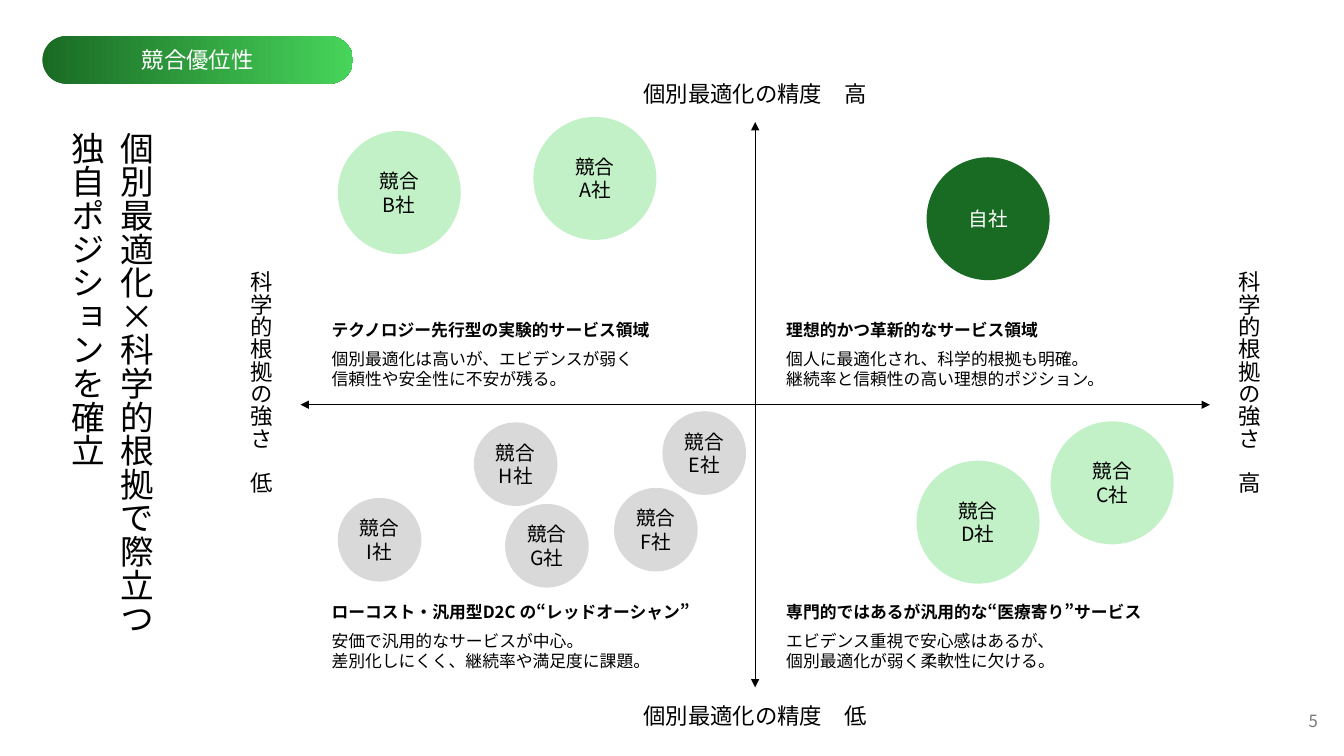
"""Build the competitive advantage slide: a positioning map with two axes."""
from copy import deepcopy
from dataclasses import dataclass

from pptx import Presentation
from pptx.dml.color import RGBColor as RGB
from pptx.enum.lang import MSO_LANGUAGE_ID as LANG
from pptx.enum.shapes import MSO_CONNECTOR as LINK, MSO_SHAPE as SHAPE
from pptx.enum.text import MSO_ANCHOR as ANCHOR, MSO_AUTO_SIZE as FIT, PP_ALIGN as ALIGN
from pptx.oxml.ns import qn
from pptx.util import Emu, Pt

PX = 9144
TOP, LEFT, BOTTOM, RIGHT = range(4)


@dataclass(frozen=True)
class Theme:
    font: str = "Noto Sans CJK JP"
    ink: str = "000000"
    white: str = "FFFFFF"
    muted: str = "797979"
    own: str = "196B24"
    bright: str = "47D45A"
    rival: str = "C2F1C8"
    crowd: str = "D9D9D9"
    headline: int = 24
    label: int = 16
    bubble: int = 14
    body: int = 12
    gap: int = 6
    axis: float = 0.75


class Board:
    def __init__(self, slide, theme):
        self.slide, self.theme = slide, theme

    def letter(self, shape, lines, size, color, align=ALIGN.CENTER, wrap=True,
               bold_first=False, vertical=False):
        frame = shape.text_frame
        layout = {"auto_size": FIT.NONE, "word_wrap": wrap, "vertical_anchor": ANCHOR.MIDDLE}
        for name, value in layout.items():
            setattr(frame, name, value)
        if vertical:
            frame._txBody.bodyPr.set("vert", "eaVert")
        for index, line in enumerate(lines):
            para = frame.add_paragraph() if index else frame.paragraphs[0]
            para.text, para.alignment = line, align
            para.space_before = Pt(self.theme.gap)
            style = {"name": self.theme.font, "size": Pt(size), "language_id": LANG.JAPANESE,
                     "bold": bold_first and index == 0}
            for run in para.runs:
                for name, value in style.items():
                    setattr(run.font, name, value)
                run.font.color.rgb = RGB.from_string(color)
                latin = run._r.rPr.find(qn("a:latin"))
                east_asian = deepcopy(latin)
                east_asian.tag = qn("a:ea")
                latin.addnext(east_asian)
            for line_break in para._p.findall(qn("a:br")):
                line_break.insert(0, deepcopy(para.runs[0]._r.rPr))

    def text(self, box, lines, size, color=None, **options):
        shape = self.slide.shapes.add_textbox(*(Emu(v * PX) for v in box))
        self.letter(shape, lines, size, color or self.theme.ink, **options)
        return shape

    def solid(self, kind, box):
        shape = self.slide.shapes.add_shape(kind, *(Emu(v * PX) for v in box))
        shape.shadow.inherit = False
        shape.line.fill.background()
        return shape

    def pill(self, box, words):
        shape = self.solid(SHAPE.ROUNDED_RECTANGLE, box)
        shape.adjustments[0] = 0.5
        shape.fill.gradient()
        shape.fill.gradient_angle = 0
        for stop, color in zip(shape.fill.gradient_stops, (self.theme.own, self.theme.bright)):
            stop.color.rgb = RGB.from_string(color)
        self.letter(shape, [words], self.theme.label, self.theme.white)

    def bubble(self, left, top, size, words, fill, color):
        shape = self.solid(SHAPE.OVAL, (left, top, size, size))
        shape.fill.solid()
        shape.fill.fore_color.rgb = RGB.from_string(fill)
        self.letter(shape, [words], self.theme.bubble, color, wrap=False)

    def axis(self, start, start_side, end, end_side):
        line = self.slide.shapes.add_connector(LINK.STRAIGHT, 0, 0, 0, 0)
        line.begin_connect(start, start_side)
        line.end_connect(end, end_side)
        line.line.width = Pt(self.theme.axis)
        line.line.color.rgb = RGB.from_string(self.theme.ink)
        stroke = line.line._get_or_add_ln()
        for end_tag in ("a:headEnd", "a:tailEnd"):
            stroke.append(stroke.makeelement(qn(end_tag), {"type": "triangle"}))
        props = line._element.spPr
        props.append(props.makeelement(qn("a:effectLst")))


QUADRANTS = [
    (319, 310, "テクノロジー先行型の実験的サービス領域",
     "個別最適化は高いが、エビデンスが弱く\n信頼性や安全性に不安が残る。"),
    (770, 310, "理想的かつ革新的なサービス領域",
     "個人に最適化され、科学的根拠も明確。\n継続率と信頼性の高い理想的ポジション。"),
    (319, 590, "ローコスト・汎用型D2C の“レッドオーシャン”",
     "安価で汎用的なサービスが中心。\n差別化しにくく、継続率や満足度に課題。"),
    (770, 590, "専門的ではあるが汎用的な“医療寄り”サービス",
     "エビデンス重視で安心感はあるが、\n個別最適化が弱く柔軟性に欠ける。"),
]
RIVALS = {"C": (1042, 418), "D": (909, 457), "A": (529, 116), "B": (335, 130)}
CROWD = {"F": (609, 484), "H": (470, 419), "I": (335, 494), "E": (657, 408), "G": (501, 500)}


def main():
    theme = Theme()
    deck = Presentation()
    deck.slide_width, deck.slide_height = Emu(1333 * PX), Emu(750 * PX)
    board = Board(deck.slides.add_slide(deck.slide_layouts[6]), theme)

    board.pill((42, 36, 308, 47), "競合優位性")
    board.text((1268, 695, 49, 40), ["5"], theme.body, theme.muted, align=ALIGN.RIGHT)

    precision_high, precision_low = (
        board.text((518, top, 462, 56), [f"個別最適化の精度　{level}"], theme.label)
        for top, level in ((65, "高"), (682, "低")))
    evidence_low, evidence_high = (
        board.text((left, 259, 78, 285), [f"科学的根拠の強さ　{level}"], theme.label, vertical=True)
        for left, level in ((220, "低"), (1200, "高")))
    board.axis(evidence_low, RIGHT, evidence_high, LEFT)
    board.axis(precision_low, TOP, precision_high, BOTTOM)

    for left, top, title, detail in QUADRANTS:
        board.text((left, top, 410, 83), [title, detail], theme.body,
                   align=ALIGN.LEFT, bold_first=True)

    board.bubble(919, 156, 122, "自社", theme.own, theme.white)
    for companies, size, fill in ((RIVALS, 122, theme.rival), (CROWD, 83, theme.crowd)):
        for company, (left, top) in companies.items():
            board.bubble(left, top, size, f"競合\n{company}社", fill, theme.ink)

    board.text((42, 121, 137, 614), ["個別最適化×科学的根拠で際立つ", "独自ポジションを確立"],
               theme.headline, align=ALIGN.LEFT, vertical=True)
    deck.save("out.pptx")


if __name__ == "__main__":
    main()
